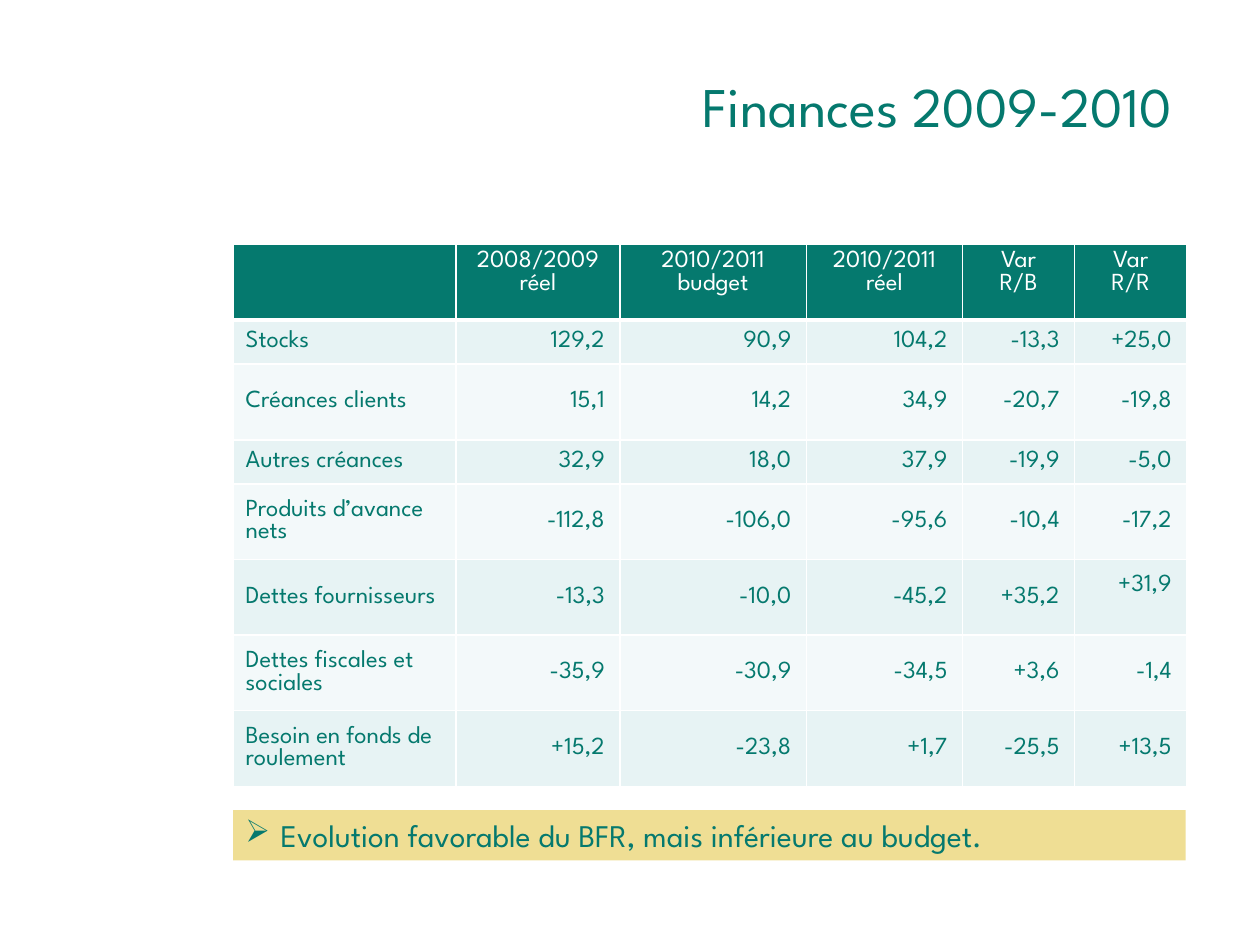
"""Build the working capital slide: title, variance table and conclusion."""
from dataclasses import dataclass

from lxml.etree import SubElement
from pptx import Presentation
from pptx.dml.color import RGBColor
from pptx.enum.shapes import MSO_SHAPE
from pptx.enum.text import MSO_ANCHOR, PP_ALIGN
from pptx.oxml.ns import qn
from pptx.util import Inches, Pt

FONT = "League Spartan"
COLORS = {
    "green": "05796E",
    "white": "FFFFFF",
    "band": "E7F3F4",
    "pale": "F3F9FA",
    "sand": "EFDE94",
}
LEFT, WIDTH = 1.85, 7.56
COLUMN_WIDTHS = [1.77, 1.3, 1.48, 1.24, 0.89, 0.89]
HEADER_HEIGHT = 0.6
HEADERS = ["", "2008/2009\nréel", "2010/2011\nbudget", "2010/2011\nréel", "Var\nR/B", "Var\nR/R"]


@dataclass
class FinanceLine:
    label: str
    values: list[str]
    height: float = 0.6


@dataclass
class CellStyle:
    fill: str
    color: str
    align: PP_ALIGN
    anchor: MSO_ANCHOR
    right: float = 0.1
    bottom: float = 0.05
    bottom_border: int = 1


FINANCE_LINES = [
    FinanceLine("Stocks", ["129,2", "90,9", "104,2", "-13,3", "+25,0"], 0.35),
    FinanceLine("Créances clients", ["15,1", "14,2", "34,9", "-20,7", "-19,8"]),
    FinanceLine("Autres créances", ["32,9", "18,0", "37,9", "-19,9", "-5,0"], 0.35),
    FinanceLine("Produits d’avance nets", ["-112,8", "-106,0", "-95,6", "-10,4", "-17,2"]),
    FinanceLine("Dettes fournisseurs", ["-13,3", "-10,0", "-45,2", "+35,2", "+31,9"]),
    FinanceLine("Dettes fiscales et sociales", ["-35,9", "-30,9", "-34,5", "+3,6", "-1,4"]),
    FinanceLine("Besoin en fonds de roulement", ["+15,2", "-23,8", "+1,7", "-25,5", "+13,5"]),
]
RAISED_VALUE = "+31,9"


def rgb(name: str) -> RGBColor:
    """Return a palette colour."""
    return RGBColor.from_string(COLORS[name])


def format_text(frame, size: int, color: str, align: PP_ALIGN) -> None:
    """Format every run of a text frame."""
    for paragraph in frame.paragraphs:
        paragraph.alignment = align
        for run in paragraph.runs:
            run.font.name = FONT
            run.font.size = Pt(size)
            run.font.bold = False
            run.font.color.rgb = rgb(color)


def add_borders(cell, bottom: int) -> None:
    """Give a cell white borders."""
    properties = cell._tc.get_or_add_tcPr()
    for side, points in {"lnL": 1, "lnR": 1, "lnT": 1, "lnB": bottom}.items():
        border = SubElement(properties, qn(f"a:{side}"), w=str(Pt(points)))
        fill = SubElement(border, qn("a:solidFill"))
        SubElement(fill, qn("a:srgbClr"), val=COLORS["white"])


def fill_cell(cell, text: str, style: CellStyle) -> None:
    """Write and style one table cell."""
    cell.text_frame.text = text
    format_text(cell.text_frame, 14, style.color, style.align)
    cell.vertical_anchor = style.anchor
    cell.margin_left = Inches(0.1)
    cell.margin_right = Inches(style.right)
    cell.margin_top = Inches(0.05)
    cell.margin_bottom = Inches(style.bottom)
    add_borders(cell, style.bottom_border)
    cell.fill.solid()
    cell.fill.fore_color.rgb = rgb(style.fill)


def add_title(slide, text: str) -> None:
    """Place the slide title."""
    title = slide.shapes.title
    title.left, title.top = Inches(0), Inches(0.52)
    title.width, title.height = Inches(9.41), Inches(0.63)
    title.text_frame.text = text
    title.text_frame.vertical_anchor = MSO_ANCHOR.MIDDLE
    format_text(title.text_frame, 32, "green", PP_ALIGN.RIGHT)


def add_finance_table(slide) -> None:
    """Draw the table of actual, budget and variance figures."""
    heights = [HEADER_HEIGHT] + [line.height for line in FINANCE_LINES]
    table = slide.shapes.add_table(
        len(heights), len(HEADERS), Inches(LEFT), Inches(1.94), Inches(WIDTH), Inches(sum(heights))
    ).table
    table.horz_banding = False
    for column, width in zip(table.columns, COLUMN_WIDTHS):
        column.width = Inches(width)
    for row, height in zip(table.rows, heights):
        row.height = Inches(height)

    header = CellStyle("green", "white", PP_ALIGN.CENTER, MSO_ANCHOR.TOP, bottom_border=3)
    for index, text in enumerate(HEADERS):
        fill_cell(table.cell(0, index), text, header)
    for row_index, line in enumerate(FINANCE_LINES, start=1):
        fill = "band" if row_index % 2 else "pale"
        for index, text in enumerate([line.label, *line.values]):
            align = PP_ALIGN.RIGHT if index else PP_ALIGN.LEFT
            bottom = 0.23 if text == RAISED_VALUE else 0.05
            style = CellStyle(fill, "green", align, MSO_ANCHOR.MIDDLE, 0.12, bottom)
            fill_cell(table.cell(row_index, index), text, style)


def add_conclusion(slide, text: str) -> None:
    """Draw the bulleted conclusion banner."""
    banner = slide.shapes.add_shape(
        MSO_SHAPE.RECTANGLE, Inches(LEFT), Inches(6.43), Inches(WIDTH), Inches(0.4)
    )
    banner.shadow.inherit = False
    banner.fill.solid()
    banner.fill.fore_color.rgb = rgb("sand")
    banner.line.fill.background()
    frame = banner.text_frame
    frame.word_wrap = True
    frame.vertical_anchor = MSO_ANCHOR.MIDDLE
    frame.text = text
    properties = frame.paragraphs[0]._p.get_or_add_pPr()
    properties.set("marL", str(Inches(0.28)))
    properties.set("indent", str(-Inches(0.28)))
    SubElement(properties, qn("a:buChar"), char="➢")
    format_text(frame, 18, "green", PP_ALIGN.LEFT)


def main() -> None:
    """Create and save the presentation."""
    presentation = Presentation()
    presentation.slide_width, presentation.slide_height = Inches(10), Inches(7.5)
    slide = presentation.slides.add_slide(presentation.slide_layouts[5])
    add_title(slide, "Finances 2009-2010")
    add_finance_table(slide)
    add_conclusion(slide, "Evolution favorable du BFR, mais inférieure au budget.")
    presentation.save("out.pptx")


if __name__ == "__main__":
    main()
